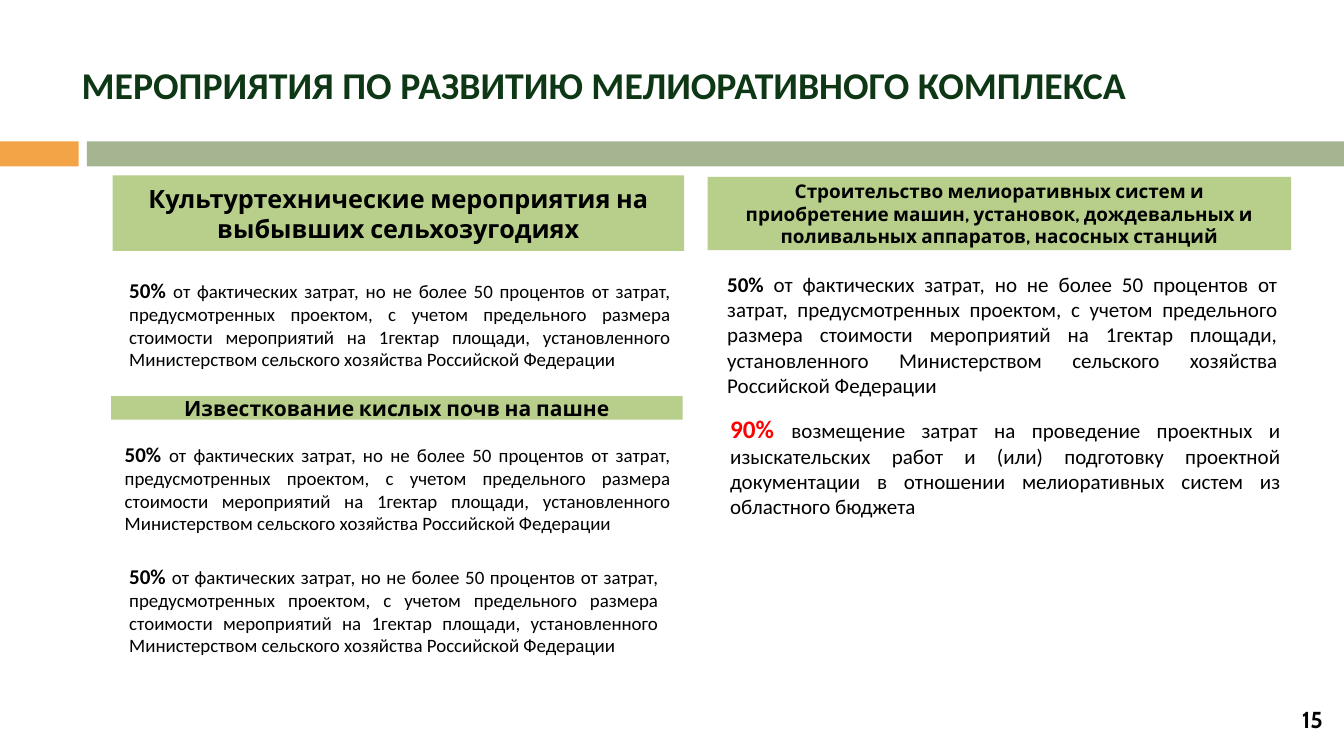
from pptx import Presentation
from pptx.dml.color import RGBColor
from pptx.enum.shapes import MSO_SHAPE
from pptx.enum.text import MSO_ANCHOR, PP_ALIGN
from pptx.util import Pt

RECTANGLE = MSO_SHAPE.RECTANGLE
TOP, MIDDLE = MSO_ANCHOR.TOP, MSO_ANCHOR.MIDDLE
LEFT, CENTER, RIGHT, JUSTIFY = PP_ALIGN.LEFT, PP_ALIGN.CENTER, PP_ALIGN.RIGHT, PP_ALIGN.JUSTIFY

BLACK = RGBColor(0x00, 0x00, 0x00)
RED = RGBColor(0xFF, 0x00, 0x00)
DARK_GREEN = RGBColor(0x0E, 0x38, 0x15)
ORANGE = RGBColor(0xF3, 0xA4, 0x47)
SAGE = RGBColor(0xA5, 0xB5, 0x92)
LIGHT_GREEN = RGBColor(0xB8, 0xCF, 0x8B)

HEADING_FONT, BODY_FONT = "Cabin", "Calibri"
SLIDE_WIDTH, SLIDE_HEIGHT = 1280.16, 720
WIDE_INSET, NARROW_INSET = 12.96, 11.52

TITLE = "МЕРОПРИЯТИЯ ПО РАЗВИТИЮ МЕЛИОРАТИВНОГО КОМПЛЕКСА"
PAGE_NUMBER = "15"
COST_SHARE = (
    "от фактических затрат, но не более 50 процентов от затрат, "
    "предусмотренных проектом, с учетом предельного размера стоимости "
    "мероприятий на 1гектар площади, установленного Министерством "
    "сельского хозяйства Российской Федерации"
)
DESIGN_COSTS = (
    "возмещение затрат на проведение проектных и изыскательских работ "
    "и (или) подготовку проектной документации в отношении мелиоративных "
    "систем из областного бюджета"
)

BANDS = [
    ((0, 134.64, 74.88, 23.76), ORANGE),
    ((82.8, 134.64, SLIDE_WIDTH - 82.8, 23.76), SAGE),
]
HEADINGS = [
    ((107.28, 167.04, 544.32, 72), 24,
     "Культуртехнические мероприятия на выбывших сельхозугодиях"),
    ((673.92, 168.48, 555.84, 69.84), 18,
     "Строительство мелиоративных систем и приобретение машин, установок, "
     "дождевальных и поливальных аппаратов, насосных станций"),
    ((105.84, 377.28, 544.32, 22.32), 20, "Известкование кислых почв на пашне"),
]
SUBSIDIES = [
    ((110.16, 257.76, 541.44, 102.24), "50% ", 20, BLACK, COST_SHARE, 18),
    ((105.84, 414, 545.76, 102.24), "50% ", 20, BLACK, COST_SHARE, 18),
    ((110.16, 529.92, 529.92, 102.24), "50% ", 20, BLACK, COST_SHARE, 18),
    ((679.68, 252, 550.08, 133.92), "50% ", 20, BLACK, COST_SHARE, 20),
    ((682.56, 386.64, 550.08, 114.48), "90% ", 24, RED, DESIGN_COSTS, 20),
]


def apply(target, values):
    for name, value in values.items():
        setattr(target, name, value)


def add_band(slide, box, color):
    band = slide.shapes.add_shape(RECTANGLE, *map(Pt, box))
    band.shadow.inherit = False
    band.fill.solid()
    band.fill.fore_color.rgb = color
    band.line.fill.background()
    return band


def add_box(slide, box):
    return slide.shapes.add_textbox(*map(Pt, box))


def write(shape, runs, font, align, anchor, inset=WIDE_INSET, spacing=1.0):
    frame = shape.text_frame
    side, edge = Pt(inset), Pt(inset / 2)
    apply(frame, {
        "word_wrap": True, "vertical_anchor": anchor,
        "margin_left": side, "margin_right": side,
        "margin_top": edge, "margin_bottom": edge,
    })
    paragraph = frame.paragraphs[0]
    apply(paragraph, {"alignment": align, "line_spacing": spacing})
    for text, size, color, bold in runs:
        run = paragraph.add_run()
        run.text = text
        apply(run.font, {"name": font, "size": Pt(size), "bold": bold})
        run.font.color.rgb = color


def main():
    deck = Presentation()
    apply(deck, {"slide_width": Pt(SLIDE_WIDTH), "slide_height": Pt(SLIDE_HEIGHT)})
    slide = deck.slides.add_slide(deck.slide_layouts[6])

    for box, color in BANDS:
        add_band(slide, box, color)

    write(add_box(slide, (66.24, 30.96, 1141.2, 103.68)),
          [(TITLE, 36, DARK_GREEN, True)],
          BODY_FONT, LEFT, MIDDLE, NARROW_INSET, 0.9)
    write(add_box(slide, (906.48, 666, 365.04, 38.16)),
          [(PAGE_NUMBER, 22, BLACK, True)],
          HEADING_FONT, RIGHT, MIDDLE, NARROW_INSET)

    for box, size, heading in HEADINGS:
        write(add_band(slide, box, LIGHT_GREEN), [(heading, size, BLACK, True)],
              HEADING_FONT, CENTER, MIDDLE)

    for box, share, share_size, share_color, terms, terms_size in SUBSIDIES:
        write(add_box(slide, box),
              [(share, share_size, share_color, True), (terms, terms_size, BLACK, False)],
              BODY_FONT, JUSTIFY, TOP)

    deck.save("out.pptx")


if __name__ == "__main__":
    main()
